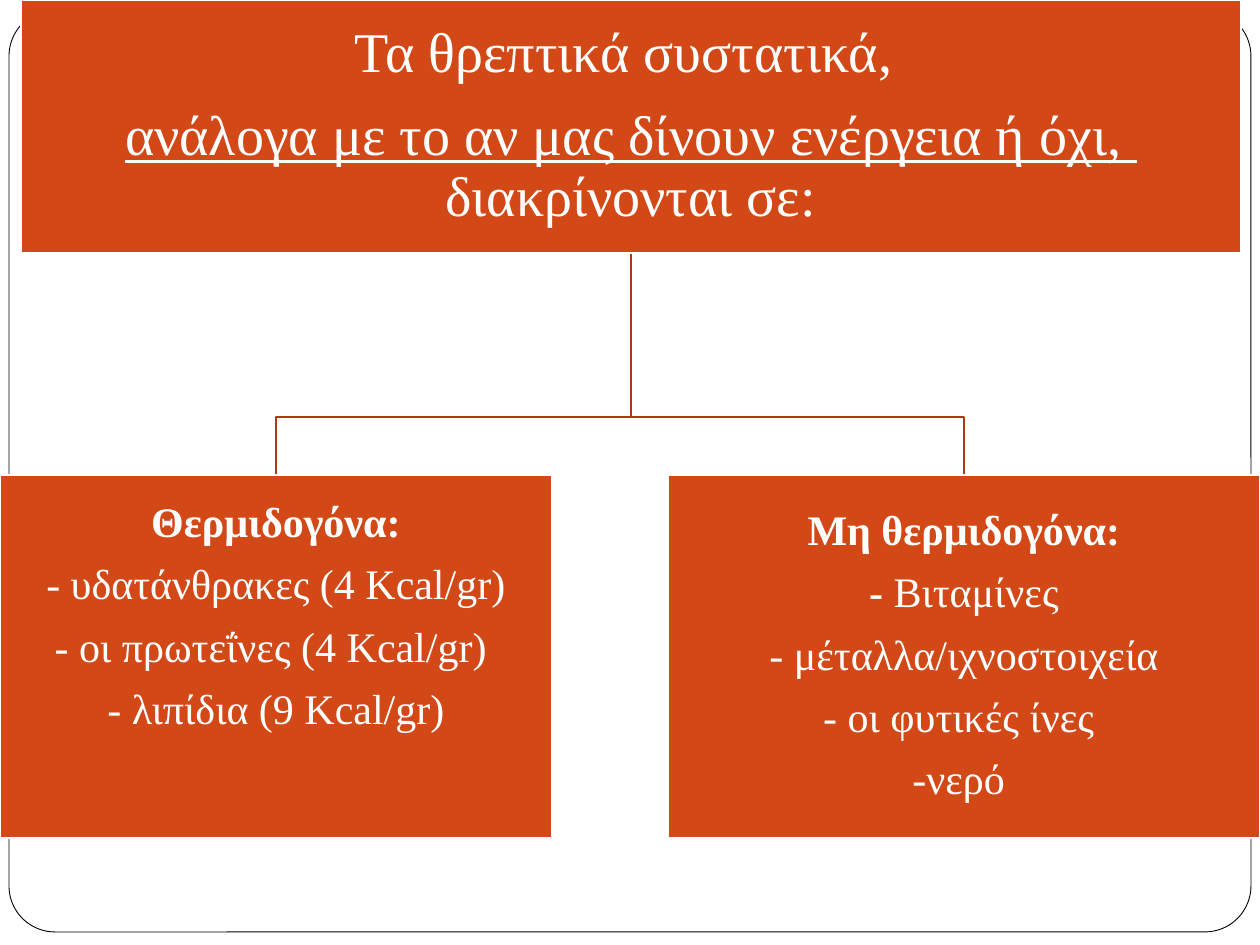
from dataclasses import dataclass

from pptx import Presentation
from pptx.dml.color import RGBColor
from pptx.enum.shapes import MSO_SHAPE
from pptx.enum.text import MSO_ANCHOR, PP_ALIGN
from pptx.util import Pt

SCALE = 914400 / 126


@dataclass(frozen=True)
class Theme:
    paper: RGBColor = RGBColor(0xFF, 0xFF, 0xFF)
    ink: RGBColor = RGBColor(0, 0, 0)
    box: RGBColor = RGBColor(0xD3, 0x48, 0x17)
    branch: RGBColor = RGBColor(0xA9, 0x3A, 0x12)
    font: str = "Times New Roman"
    title: int = 32
    body: int = 24
    thin: float = 0.5
    line: float = 1
    leading: float = 0.9
    gap: float = 0.4  # space after a paragraph, as a share of its type size


THEME = Theme()

# A paragraph is a list of (text, style) runs; style is "", "bold" or "underline".
TITLE = [
    [("Τα θρεπτικά συστατικά, ", "")],
    [("ανάλογα με το αν μας δίνουν ενέργεια ή όχι,  ", "underline"),
     ("διακρίνονται σε:", "")],
]
CALORIC = [
    [("Θερμιδογόνα:", "bold")],
    [("- υδατάνθρακες (4 Kcal/gr)", "")],
    [("- οι πρωτεΐνες (4 Kcal/gr) ", "")],
    [("- λιπίδια (9 Kcal/gr)", "")],
]
NON_CALORIC = [
    [("Μη θερμιδογόνα:", "bold")],
    [("- ", "bold"), ("Βιταμίνες", "")],
    [("- μέταλλα/ιχνοστοιχεία", "")],
    [("- οι φυτικές ίνες ", "")],
    [("-νερό ", "")],
]


def px(n):
    return round(n * SCALE)


def add_box(slide, preset, box, fill, line, width):
    s = slide.shapes.add_shape(preset, *map(px, box))
    s.shadow.inherit = False
    s.fill.solid()
    s.fill.fore_color.rgb = fill
    s.line.color.rgb = line
    s.line.width = Pt(width)
    return s


def add_frame(slide, box):
    s = add_box(slide, MSO_SHAPE.ROUNDED_RECTANGLE, box,
                THEME.paper, THEME.ink, THEME.thin)
    s.adjustments[0] = 0.05


def add_node(slide, box, paragraphs, size, bottom=3):
    """Filled box with centred text; bottom is the lower text inset."""
    s = add_box(slide, MSO_SHAPE.RECTANGLE, box,
                THEME.box, THEME.paper, THEME.line)
    tf = s.text_frame
    tf.word_wrap = True
    tf.vertical_anchor = MSO_ANCHOR.MIDDLE
    tf.margin_left = tf.margin_right = tf.margin_top = px(3)
    tf.margin_bottom = px(bottom)
    for i, runs in enumerate(paragraphs):
        p = tf.add_paragraph() if i else tf.paragraphs[0]
        p.alignment = PP_ALIGN.CENTER
        p.line_spacing = THEME.leading
        p.space_after = Pt(size * THEME.gap)
        p.font.name = THEME.font
        p.font.size = Pt(size)
        p.font.color.rgb = THEME.paper
        for text, style in runs:
            r = p.add_run()
            r.text = text
            if style == "bold":
                r.font.bold = True
            elif style == "underline":
                r.font.underline = True


def add_branch(slide, parent, child, drop):
    """Elbow from the foot of parent to the head of child, turning drop above it."""
    x1, y1 = parent[0] + parent[2] / 2, parent[1] + parent[3]
    x2, y2 = child[0] + child[2] / 2, child[1]
    builder = slide.shapes.build_freeform(x1, y1, SCALE)
    builder.add_line_segments([(x1, y2 - drop), (x2, y2 - drop), (x2, y2)], close=False)
    s = builder.convert_to_shape()
    s.shadow.inherit = False
    s.fill.background()
    s.line.color.rgb = THEME.branch
    s.line.width = Pt(THEME.line)


def add_hierarchy(slide, box):
    x, y, w, h = box
    top, height = y + 475, h - 475
    root = (x + 21, y, w - 40, 253)
    left = (x, top, 552, height)
    right = (x + w - 592, top, 592, height)
    for child in (right, left):
        add_branch(slide, root, child, drop=58)
    add_node(slide, root, TITLE, THEME.title)
    add_node(slide, left, CALORIC, THEME.body, bottom=81)
    add_node(slide, right, NON_CALORIC, THEME.body)


def main():
    prs = Presentation()
    prs.slide_width, prs.slide_height = px(1260), px(945)
    slide = prs.slides.add_slide(prs.slide_layouts[6])
    add_frame(slide, (9, 10, 1242, 922))
    add_hierarchy(slide, (0, 0, 1260, 838))
    prs.save("out.pptx")


if __name__ == "__main__":
    main()
